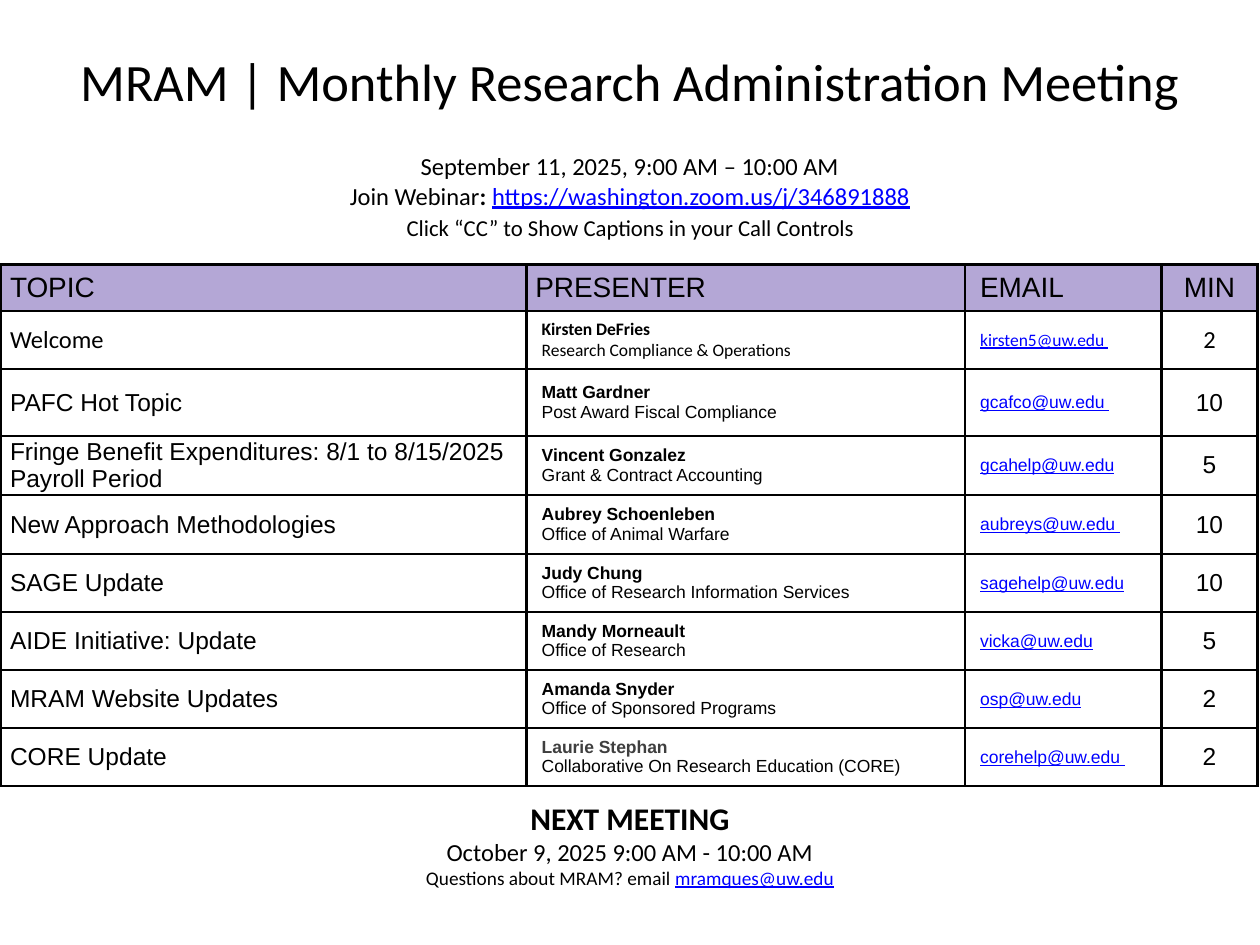
import pptx
import pptx.util
from pptx.dml.color import RGBColor
from pptx.enum.text import PP_ALIGN, MSO_ANCHOR, MSO_AUTO_SIZE
from pptx.oxml import parse_xml
from pptx.oxml.ns import nsdecls

Inches, Pt = pptx.util.Inches, pptx.util.Pt

BLACK = RGBColor(0x00, 0x00, 0x00)
WHITE = RGBColor(0xFF, 0xFF, 0xFF)
LILAC = RGBColor(0xB4, 0xA7, 0xD6)
BLUE = RGBColor(0x00, 0x00, 0xFF)
GREY = RGBColor(0x3F, 0x3F, 0x3F)

W, H = 10, 7.5
COLS = (4.17, 3.48, 1.56, 0.76)
ROWS = (0.37, 0.46, 0.53, 0.47, 0.47, 0.46, 0.46, 0.46, 0.46)
PAD = 0.07      # inset of topic and minutes cells
INDENT = 0.12   # inset of presenter and email cells
LINK = dict(color=BLUE, underline=True)

HEADERS = ("TOPIC", "PRESENTER", "EMAIL", "MIN")
AGENDA = (
    ("Welcome", "Kirsten DeFries", "Research Compliance & Operations",
     "kirsten5@uw.edu ", "2"),
    ("PAFC Hot Topic", "Matt Gardner", "Post Award Fiscal Compliance",
     "gcafco@uw.edu ", "10"),
    ("Fringe Benefit Expenditures: 8/1 to 8/15/2025 Payroll Period",
     "Vincent Gonzalez", "Grant & Contract Accounting", "gcahelp@uw.edu", "5"),
    ("New Approach Methodologies", "Aubrey Schoenleben",
     "Office of Animal Warfare", "aubreys@uw.edu ", "10"),
    ("SAGE Update", "Judy Chung", "Office of Research Information Services",
     "sagehelp@uw.edu", "10"),
    ("AIDE Initiative: Update", "Mandy Morneault", "Office of Research",
     "vicka@uw.edu", "5"),
    ("MRAM Website Updates", "Amanda Snyder", "Office of Sponsored Programs",
     "osp@uw.edu", "2"),
    ("CORE Update", "Laurie Stephan",
     "Collaborative On Research Education (CORE)", "corehelp@uw.edu ", "2"),
)


def write(tf, lines, align, **base):
    """Each line is a list of (text, format) runs; base applies to all."""
    for i, runs in enumerate(lines):
        p = tf.paragraphs[0] if i == 0 else tf.add_paragraph()
        p.alignment = align
        for text, fmt in runs:
            r = p.add_run()
            r.text = text
            values = {"name": "Calibri", "color": BLACK, **base, **fmt}
            r.font.color.rgb = values.pop("color")
            values["size"] = Pt(values["size"])
            for key, value in values.items():
                setattr(r.font, key, value)


def set_frame(tf):
    frame = dict(word_wrap=True, auto_size=MSO_AUTO_SIZE.NONE,
                 vertical_anchor=MSO_ANCHOR.TOP)
    for side in ("left", "right", "top", "bottom"):
        frame["margin_" + side] = Inches(0.1)
    for key, value in frame.items():
        setattr(tf, key, value)


def add_title(s, box):
    sp = s.shapes.title
    sp.left, sp.top, sp.width, sp.height = map(Inches, box)
    set_frame(sp.text_frame)
    write(sp.text_frame,
          [[("MRAM | Monthly Research Administration Meeting", {})]],
          PP_ALIGN.CENTER, size=30)


def add_centred_text(s, box, lines):
    tf = s.shapes.add_textbox(*map(Inches, box)).text_frame
    set_frame(tf)
    write(tf, lines, PP_ALIGN.CENTER, size=14)
    return tf


def format_cell(cell, fill, left, right):
    tc_pr = cell._tc.get_or_add_tcPr()
    for side in "LRTB":
        tc_pr.append(parse_xml(
            f'<a:ln{side} {nsdecls("a")} w="{Pt(1.5)}"><a:solidFill>'
            f'<a:srgbClr val="{BLACK}"/></a:solidFill></a:ln{side}>'))
    cell.fill.solid()
    cell.fill.fore_color.rgb = fill
    values = dict(margin_left=Inches(left), margin_right=Inches(right),
                  margin_top=0, margin_bottom=0,
                  vertical_anchor=MSO_ANCHOR.MIDDLE)
    for key, value in values.items():
        setattr(cell, key, value)


def add_agenda(s, left, top):
    table = s.shapes.add_table(len(ROWS), len(COLS), *map(
        Inches, (left, top, sum(COLS), sum(ROWS)))).table
    table.horz_banding = table.first_row = False
    for col, width in zip(table.columns, COLS):
        col.width = Inches(width)
    for row, height in zip(table.rows, ROWS):
        row.height = Inches(height)
    aligns = (PP_ALIGN.LEFT,) * 3 + (PP_ALIGN.CENTER,)

    # Header row
    for c, text in enumerate(HEADERS):
        cell = table.cell(0, c)
        format_cell(cell, LILAC, INDENT if text == "EMAIL" else PAD, PAD)
        write(cell.text_frame, [[(text, {})]], aligns[c], size=16, name="Arial")

    # One row per topic
    insets = (PAD, INDENT, INDENT, PAD)
    for i, (topic, person, office, email, minutes) in enumerate(AGENDA, 1):
        font = "Calibri" if i == 1 else "Arial"
        name_color = GREY if i == len(AGENDA) else BLACK
        contents = (
            (14, [[(topic, {})]]),
            (10, [[(person, dict(bold=True, color=name_color))],
                  [(office, {})]]),
            (10, [[(email, LINK)]]),
            (14, [[(minutes, {})]]),
        )
        for c, (size, lines) in enumerate(contents):
            cell = table.cell(i, c)
            format_cell(cell, WHITE, insets[c], insets[c])
            write(cell.text_frame, lines, aligns[c], size=size, name=font)


def main():
    prs = pptx.Presentation()
    prs.slide_width, prs.slide_height = Inches(W), Inches(H)
    s = prs.slides.add_slide(prs.slide_layouts[5])
    table_top = 0.28 * H
    table_bottom = table_top + sum(ROWS)

    add_title(s, (0, 0.29, W, 0.82))

    # Date and webinar link
    tf = add_centred_text(s, (0, 1.1, W, 1), [
        [("September 11, 2025, 9:00 AM – 10:00 AM", {})],
        [("Join Webinar", {}), (": ", dict(bold=True)),
         ("https://washington.zoom.us/j/346891888", LINK)],
        [("Click “CC” to Show Captions in your Call Controls",
          dict(size=13))]])
    tf.paragraphs[-1].line_spacing = 1.15

    add_agenda(s, 0.01, table_top)

    # Next meeting and contact
    add_centred_text(s, (0, table_bottom, W, 0.88), [
        [("NEXT MEETING", dict(size=18, bold=True))],
        [("October 9, 2025 9:00 AM - 10:00 AM", {})],
        [("Questions about MRAM? email ", dict(size=11)),
         ("mramques@uw.edu", dict(size=11, **LINK))]])
    prs.save("out.pptx")


if __name__ == "__main__":
    main()
